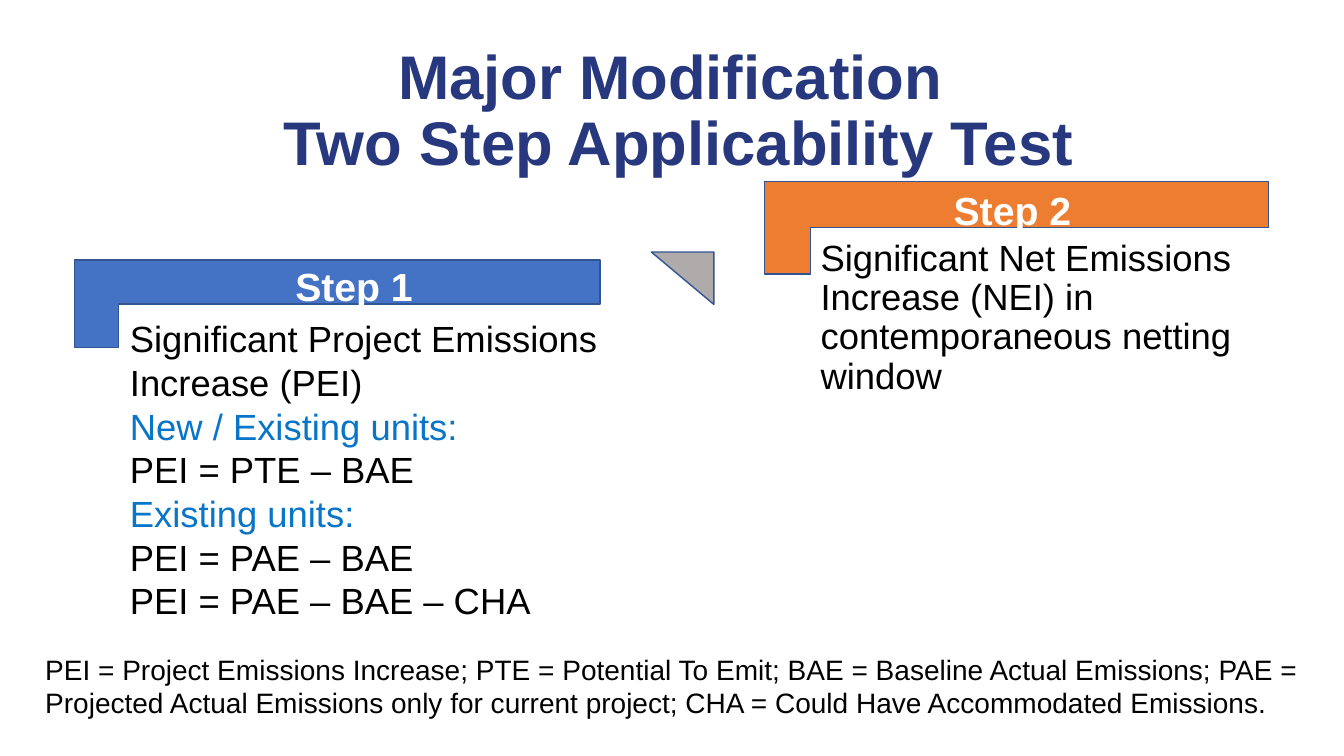
from dataclasses import dataclass

from pptx import Presentation
from pptx.dml.color import RGBColor
from pptx.enum.shapes import MSO_SHAPE as Shp
from pptx.enum.text import MSO_ANCHOR as Anchor, MSO_AUTO_SIZE as Fit, PP_ALIGN as Align
from pptx.util import Inches, Pt


@dataclass(frozen=True)
class Theme:
    font: str = "Arial"
    navy: str = "27387E"
    blue: str = "4472C4"
    orange: str = "ED7D31"
    gray: str = "AFABAB"
    outline: str = "325491"
    accent: str = "0875C8"
    black: str = "000000"
    white: str = "FFFFFF"
    title_pt: int = 44
    label_pt: int = 28
    body_pt: int = 26
    note_pt: int = 20


@dataclass(frozen=True)
class Box:
    left: float
    top: float
    width: float
    height: float

    def emu(self):
        return [Inches(v) for v in (self.left, self.top, self.width, self.height)]


@dataclass(frozen=True)
class Step:
    label: str
    label_box: Box
    corner: Box
    color: str


T = Theme()

STEPS = [
    Step("Step 1", Box(2.83, 2.55, 1.38, 0.57), Box(2.91, 0.41, 0.87, 5.21), T.blue),
    Step("Step 2", Box(9.36, 1.8, 1.38, 0.57), Box(9.62, -0.24, 0.92, 5), T.orange),
]
PEI_LINES = [
    ("Significant Project Emissions", T.black),
    ("Increase (PEI)", T.black),
    ("New / Existing units:", T.accent),
    ("PEI = PTE – BAE", T.black),
    ("Existing units:", T.accent),
    ("PEI = PAE – BAE", T.black),
    ("PEI = PAE – BAE – CHA", T.black),
]
NEI_TEXT = "Significant Net Emissions Increase (NEI) in contemporaneous netting window"
NOTE_TEXT = (
    "PEI = Project Emissions Increase; PTE = Potential To Emit; "
    "BAE = Baseline Actual Emissions; PAE = Projected Actual Emissions only for "
    "current project; CHA = Could Have Accommodated Emissions."
)


def add_run(p, text: str, size: int, color: str, bold: bool = False) -> None:
    r = p.add_run()
    r.text = text
    r.font.name = T.font
    r.font.size = Pt(size)
    r.font.bold = bold
    r.font.color.rgb = RGBColor.from_string(color)


def add_filled(s, kind: Shp, box: Box, fill: str, rotation: int = 0, outlined: bool = True):
    sp = s.shapes.add_shape(kind, *box.emu())
    sp.rotation = rotation
    sp.shadow.inherit = False
    sp.fill.solid()
    sp.fill.fore_color.rgb = RGBColor.from_string(fill)
    if outlined:
        sp.line.color.rgb = RGBColor.from_string(T.outline)
        sp.line.width = Pt(1)
    else:
        sp.line.fill.background()
    return sp


def add_text(s, box: Box, wrap: bool = True, fit: Fit = Fit.SHAPE_TO_FIT_TEXT):
    tf = s.shapes.add_textbox(*box.emu()).text_frame
    tf.word_wrap = wrap
    tf.auto_size = fit
    return tf


def add_step(s, step: Step) -> None:
    add_filled(s, Shp.CORNER, step.corner, step.color, rotation=90)
    tf = add_text(s, step.label_box, wrap=False)
    add_run(tf.paragraphs[0], step.label, T.label_pt, T.white, bold=True)


def add_title(s) -> None:
    title = s.shapes.title
    title.left, title.top, title.width, title.height = Box(0.74, 0.39, 11.99, 1.45).emu()
    tf = title.text_frame
    tf.vertical_anchor = Anchor.MIDDLE
    tf.auto_size = Fit.NONE
    p = tf.paragraphs[0]
    p.alignment = Align.CENTER
    p.line_spacing = 0.9
    add_run(p, "Major Modification ", T.title_pt, T.navy, bold=True)
    p.add_line_break()
    add_run(p, "Two Step Applicability Test", T.title_pt, T.navy, bold=True)


def add_pei_panel(s) -> None:
    sp = add_filled(s, Shp.RECTANGLE, Box(1.19, 3.09, 5.72, 3.16), T.white, outlined=False)
    tf = sp.text_frame
    tf.word_wrap = True
    tf.auto_size = Fit.SHAPE_TO_FIT_TEXT
    tf.vertical_anchor = Anchor.TOP
    for i, (text, color) in enumerate(PEI_LINES):
        p = tf.add_paragraph() if i else tf.paragraphs[0]
        p.alignment = Align.LEFT
        add_run(p, text, T.body_pt, color)


def add_nei_text(s) -> None:
    tf = add_text(s, Box(8.04, 2.28, 4.69, 1.56), fit=Fit.NONE)
    tf.margin_left = tf.margin_top = tf.margin_right = tf.margin_bottom = Inches(0.1)
    p = tf.paragraphs[0]
    p.line_spacing = 0.9
    add_run(p, NEI_TEXT, T.body_pt, T.black)


def add_note(s) -> None:
    p = add_text(s, Box(0.25, 6.42, 12.83, 0.77)).paragraphs[0]
    p.level = 1
    pPr = p._p.get_or_add_pPr()
    pPr.set("marL", str(Inches(0.1)))
    pPr.set("indent", "0")
    add_run(p, NOTE_TEXT, T.note_pt, T.black)


def main() -> None:
    prs = Presentation()
    prs.slide_width, prs.slide_height = Inches(13.33), Inches(7.5)
    s = prs.slides.add_slide(prs.slide_layouts[5])
    add_title(s)

    # Step 1 with its formulas
    add_step(s, STEPS[0])
    add_pei_panel(s)

    # Pointer between the steps
    add_filled(s, Shp.RIGHT_TRIANGLE, Box(6.46, 2.5, 0.62, 0.52), T.gray, rotation=180)

    # Step 2 with its description
    add_step(s, STEPS[1])
    add_nei_text(s)

    # Abbreviations
    add_note(s)
    prs.save("out.pptx")


if __name__ == "__main__":
    main()
